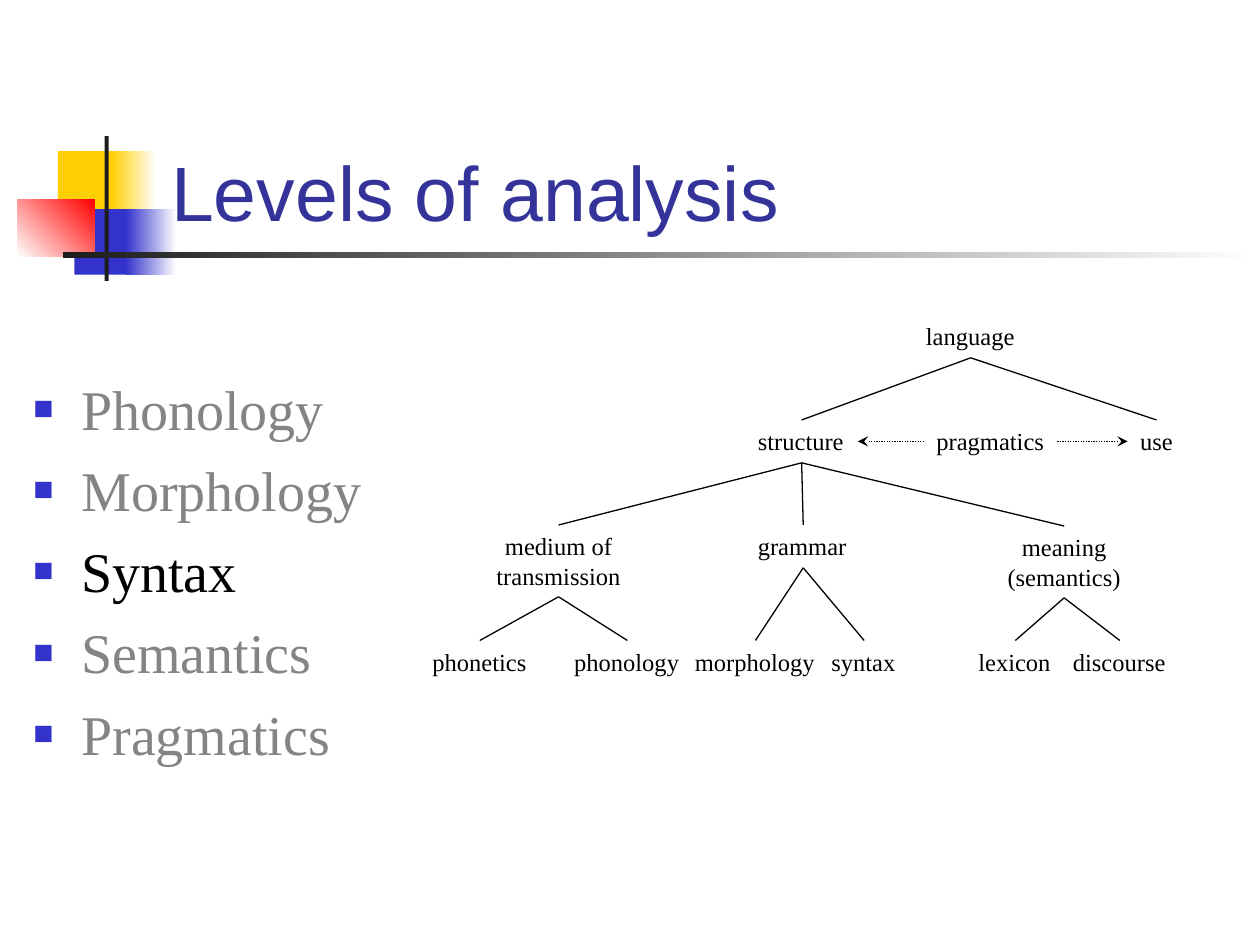
from dataclasses import dataclass
from typing import NamedTuple

from lxml import etree
from pptx import Presentation
from pptx.dml.color import RGBColor
from pptx.enum.dml import MSO_LINE
from pptx.enum.shapes import MSO_CONNECTOR, MSO_SHAPE
from pptx.enum.text import MSO_ANCHOR, MSO_AUTO_SIZE, PP_ALIGN
from pptx.oxml.ns import qn
from pptx.shapes.autoshape import Shape
from pptx.slide import Slide
from pptx.util import Emu, Inches, Pt

RECTANGLE = MSO_SHAPE.RECTANGLE
STRAIGHT = MSO_CONNECTOR.STRAIGHT
DOTTED = MSO_LINE.ROUND_DOT
BOTTOM_ANCHOR = MSO_ANCHOR.BOTTOM
FIT_TEXT = MSO_AUTO_SIZE.SHAPE_TO_FIT_TEXT
CENTER = PP_ALIGN.CENTER
TOP, LEFT, BOTTOM, RIGHT = range(4)
COLUMNS, ROWS = 120, 90


@dataclass(frozen=True)
class Theme:
    heading_font: str = "Arial"
    text_font: str = "Times New Roman"
    title_size: float = 44
    list_size: float = 32
    node_size: float = 14
    line_width: float = 0.75
    title: str = "333399"
    ink: str = "000000"
    muted: str = "848484"
    blue: str = "3333CC"
    yellow: str = "FFCF01"
    red: str = "FF0000"
    dark: str = "1C1C1C"
    white: str = "FFFFFF"


THEME = Theme()


class Area(NamedTuple):
    column: float
    row: float
    columns: float
    rows: float


class Block(NamedTuple):
    area: Area
    colors: tuple[str, ...]
    angle: float = 0


class Node(NamedTuple):
    label: str
    column: float
    row: float
    columns: float
    parent: str = ""


class Link(NamedTuple):
    start: str
    start_side: int
    end: str
    end_side: int
    dotted_arrow: bool = False


BLOCKS = [
    Block(Area(5.52, 14.4, 5.76, 6.24), (THEME.yellow,)),
    Block(Area(10.56, 14.4, 4.32, 6.24), (THEME.yellow, THEME.white)),
    Block(Area(7.08, 19.92, 5.52, 6.24), (THEME.blue,)),
    Block(Area(12, 19.92, 4.8, 6.24), (THEME.blue, THEME.white)),
    Block(Area(1.68, 18.96, 7.32, 5.52), (THEME.white, THEME.red), 45),
    Block(Area(9.96, 12.96, 0.4, 13.8), (THEME.dark,)),
    Block(Area(6, 24, 114, 0.6), (THEME.dark, THEME.white)),
]
TITLE_AREA = Area(15.12, 8.16, 102.24, 15)
LIST_AREA = Area(2, 27, 40, 54)
LIST_INSET_ROWS = 8.64
TOPICS = ["Phonology", "Morphology", "Syntax", "Semantics", "Pragmatics"]
CURRENT_TOPIC = "Syntax"

MEDIUM = "medium of\ntransmission"
MEANING = "meaning\n(semantics)"
NODES = [
    Node("language", 87, 30, 10.9),
    Node("structure", 71, 40, 10.7, "language"),
    Node("pragmatics", 88, 40, 12.7),
    Node("use", 107.4, 40, 5.5, "language"),
    Node("grammar", 71, 50, 11, "structure"),
    Node(MEANING, 94.7, 50.1, 13.3, "structure"),
    Node(MEDIUM, 46, 50, 14.4, "structure"),
    Node("phonetics", 40, 61, 11.4, MEDIUM),
    Node("phonology", 53.5, 61, 12.5, MEDIUM),
    Node("morphology", 65, 61, 13.9, "grammar"),
    Node("syntax", 78, 61, 8.6, "grammar"),
    Node("lexicon", 92, 61, 9.4, MEANING),
    Node("discourse", 101, 61, 11.3, MEANING),
]
LINKS = [Link(node.parent, BOTTOM, node.label, TOP) for node in NODES if node.parent] + [
    Link("pragmatics", LEFT, "structure", RIGHT, True),
    Link("pragmatics", RIGHT, "use", LEFT, True),
]


class Grid(NamedTuple):
    column: float
    row: float

    def place(self, area: Area) -> tuple[Emu, Emu, Emu, Emu]:
        return (
            Emu(int(area.column * self.column)),
            Emu(int(area.row * self.row)),
            Emu(int(area.columns * self.column)),
            Emu(int(area.rows * self.row)),
        )


def rgb(color: str) -> RGBColor:
    return RGBColor.from_string(color)


def add_block(slide: Slide, grid: Grid, block: Block) -> None:
    shape = slide.shapes.add_shape(RECTANGLE, *grid.place(block.area))
    shape.shadow.inherit = False
    shape.line.fill.background()
    if len(block.colors) == 1:
        shape.fill.solid()
        shape.fill.fore_color.rgb = rgb(block.colors[0])
        return
    shape.fill.gradient()
    shape.fill.gradient_angle = block.angle
    for stop, color in zip(shape.fill.gradient_stops, block.colors):
        stop.color.rgb = rgb(color)


def add_run(paragraph, text: str, font: str, size: float, color: str) -> None:
    run = paragraph.add_run()
    run.text = text
    run.font.name = font
    run.font.size = Pt(size)
    run.font.color.rgb = rgb(color)


def add_title(slide: Slide, grid: Grid, text: str) -> None:
    frame = slide.shapes.add_textbox(*grid.place(TITLE_AREA)).text_frame
    frame.word_wrap = True
    frame.vertical_anchor = BOTTOM_ANCHOR
    add_run(frame.paragraphs[0], text, THEME.heading_font, THEME.title_size, THEME.title)


def add_bullet(paragraph) -> None:
    properties = paragraph._p.get_or_add_pPr()
    indent = Inches(0.38)
    properties.set("marL", str(indent))
    properties.set("indent", str(-indent))
    color = etree.SubElement(properties, qn("a:buClr"))
    etree.SubElement(color, qn("a:srgbClr"), val=THEME.blue)
    etree.SubElement(properties, qn("a:buSzPct"), val="60000")
    etree.SubElement(properties, qn("a:buFont"), typeface=THEME.heading_font)
    etree.SubElement(properties, qn("a:buChar"), char="■")


def add_topics(slide: Slide, grid: Grid) -> None:
    frame = slide.shapes.add_textbox(*grid.place(LIST_AREA)).text_frame
    frame.word_wrap = True
    frame.margin_top = Emu(int(LIST_INSET_ROWS * grid.row))
    for index, topic in enumerate(TOPICS):
        paragraph = frame.add_paragraph() if index else frame.paragraphs[0]
        paragraph.space_after = Pt(8)
        add_bullet(paragraph)
        color = THEME.ink if topic == CURRENT_TOPIC else THEME.muted
        add_run(paragraph, topic, THEME.text_font, THEME.list_size, color)


def add_node(slide: Slide, grid: Grid, node: Node) -> Shape:
    lines = node.label.split("\n")
    rows = 4.08 if len(lines) == 1 else 6.84
    shape = slide.shapes.add_textbox(*grid.place(Area(node.column, node.row, node.columns, rows)))
    frame = shape.text_frame
    frame.word_wrap = False
    frame.auto_size = FIT_TEXT
    for index, line in enumerate(lines):
        paragraph = frame.add_paragraph() if index else frame.paragraphs[0]
        if len(lines) > 1:
            paragraph.alignment = CENTER
        add_run(paragraph, line, THEME.text_font, THEME.node_size, THEME.ink)
    return shape


def add_link(slide: Slide, shapes: dict[str, Shape], link: Link) -> None:
    connector = slide.shapes.add_connector(STRAIGHT, 0, 0, 0, 0)
    connector.begin_connect(shapes[link.start], link.start_side)
    connector.end_connect(shapes[link.end], link.end_side)
    connector.line.color.rgb = rgb(THEME.ink)
    connector.line.width = Pt(THEME.line_width)
    properties = connector._element.spPr
    if link.dotted_arrow:
        connector.line.dash_style = DOTTED
        etree.SubElement(properties.find(qn("a:ln")), qn("a:tailEnd"), type="stealth")
    etree.SubElement(properties, qn("a:effectLst"))


def main() -> None:
    presentation = Presentation()
    presentation.slide_width = Inches(10)
    presentation.slide_height = Inches(7.5)
    grid = Grid(presentation.slide_width / COLUMNS, presentation.slide_height / ROWS)
    slide = presentation.slides.add_slide(presentation.slide_layouts[6])
    for block in BLOCKS:
        add_block(slide, grid, block)
    add_title(slide, grid, "Levels of analysis")
    add_topics(slide, grid)
    shapes = {node.label: add_node(slide, grid, node) for node in NODES}
    for link in LINKS:
        add_link(slide, shapes, link)
    presentation.save("out.pptx")


if __name__ == "__main__":
    main()
